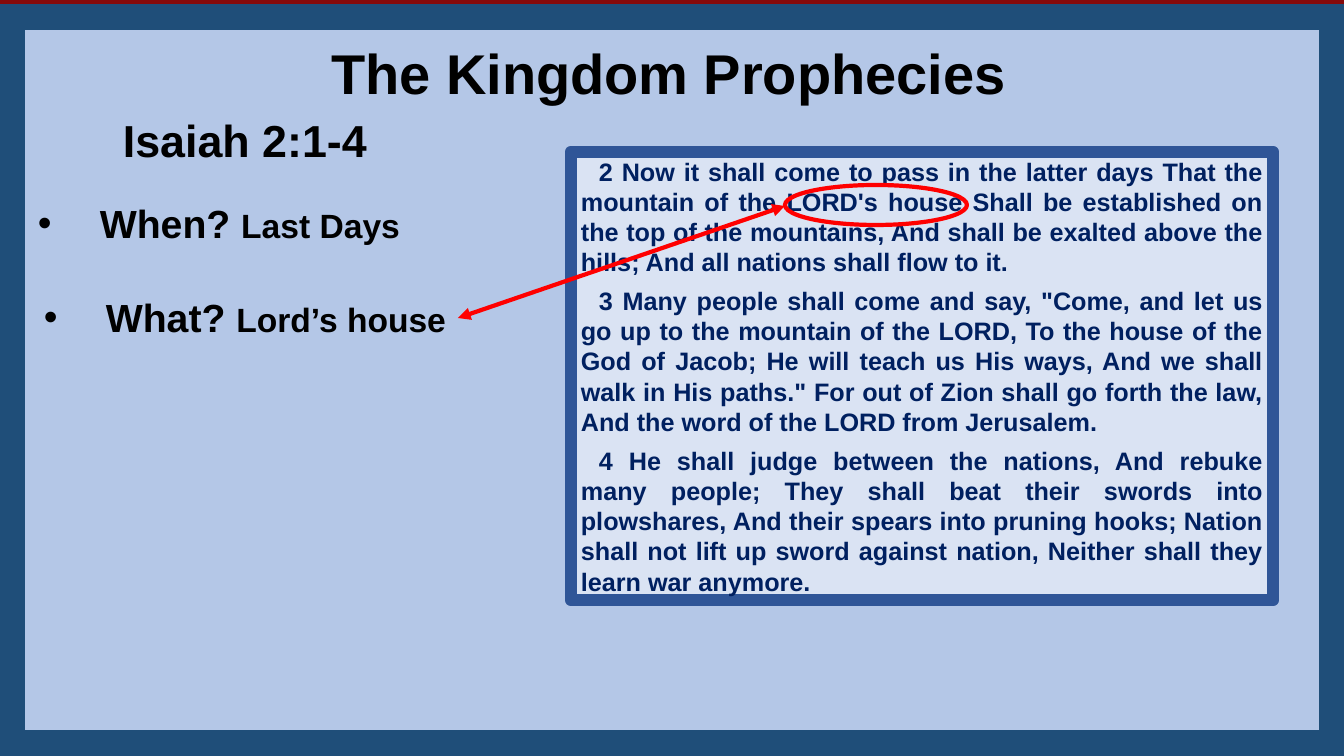
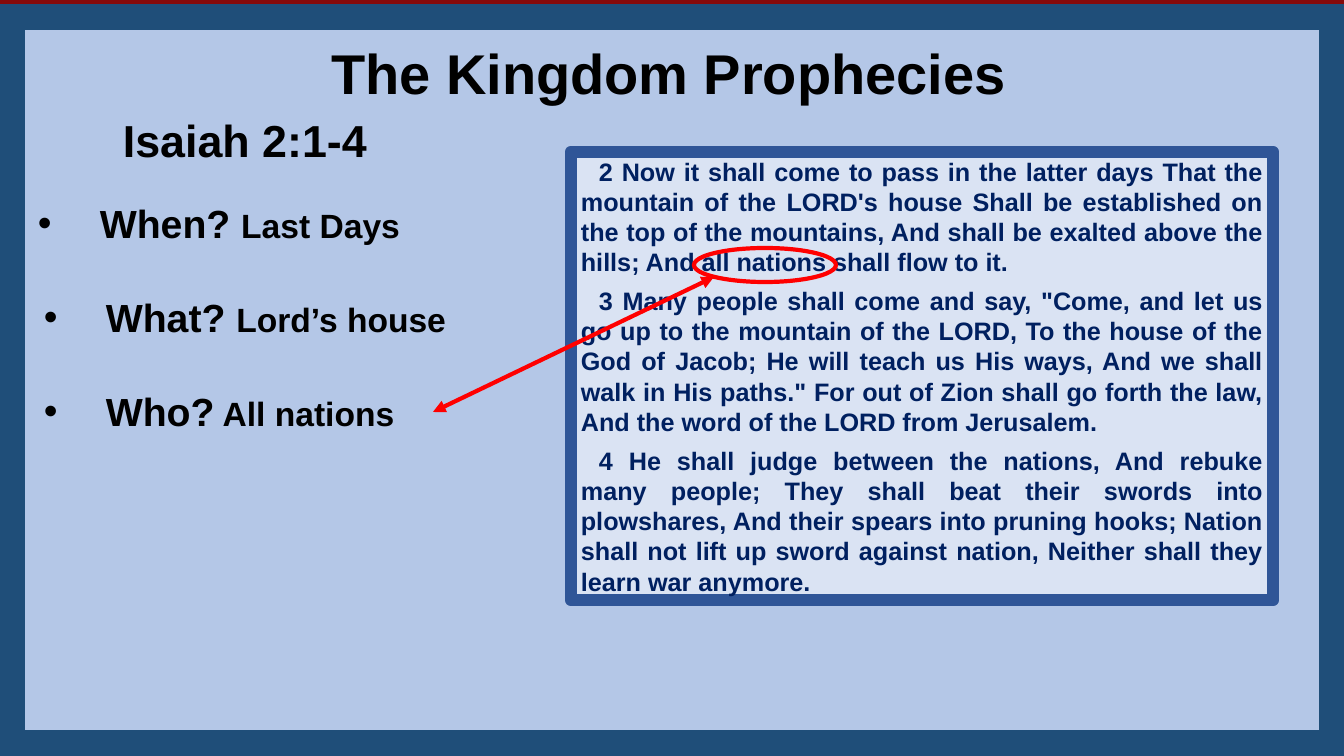
from lxml.etree import SubElement
from pptx import Presentation
from pptx.dml.color import RGBColor
from pptx.enum.shapes import MSO_CONNECTOR as CONNECTOR, MSO_SHAPE as SHAPE
from pptx.enum.text import MSO_ANCHOR as ANCHOR, MSO_AUTO_SIZE as AUTO_SIZE, PP_ALIGN as ALIGN
from pptx.oxml.ns import qn
from pptx.util import Emu, Pt

PX = 914400 / 100.8
FONT = "Arial"
MAROON, NAVY_FRAME, SKY = "860A0A", "1F4E79", "B4C7E7"
PANEL_FILL, PANEL_EDGE = "DAE3F3", "2F5597"
BLACK, VERSE_BLUE, RED = "000000", "002060", "FF0000"

VERSES = [
    "2 Now it shall come to pass in the latter days That the mountain of the LORD's house "
    "Shall be established on the top of the mountains, And shall be exalted above the hills; "
    "And all nations shall flow to it.",
    "3 Many people shall come and say, \"Come, and let us go up to the mountain of the LORD, "
    "To the house of the God of Jacob; He will teach us His ways, And we shall walk in His "
    "paths.\" For out of Zion shall go forth the law, And the word of the LORD from Jerusalem.",
    "4 He shall judge between the nations, And rebuke many people; They shall beat their "
    "swords into plowshares, And their spears into pruning hooks; Nation shall not lift up "
    "sword against nation, Neither shall they learn war anymore.",
]

# Question, answer and left margin of each bullet
QUESTIONS = [
    ("When? ", "Last Days", 64),
    ("What? ", "Lord’s house", 70),
    ("Who?", " All nations", 70),
]

# Number of questions shown, ellipse around the phrase, arrow ends
SLIDES = [
    (2, (785, 185, 182, 40), (458, 318, 785, 206)),
    (3, (694, 248, 142, 34), (433, 412, 714, 277)),
]


def px(length):
    return Emu(round(length * PX))


def color(hex_string):
    return RGBColor.from_string(hex_string)


def set_line(line, hex_string, width):
    line.color.rgb = color(hex_string)
    line.width = Pt(width)


def add_outlined(slide, kind, bounds, fill, edge, width):
    shape = slide.shapes.add_shape(kind, *map(px, bounds))
    shape.shadow.inherit = False
    if fill:
        shape.fill.solid()
        shape.fill.fore_color.rgb = color(fill)
    else:
        shape.fill.background()
    set_line(shape.line, edge, width)
    return shape


def add_span(para, text, size, hex_string):
    span = para.add_run()
    span.text = text
    font_format = {"name": FONT, "size": Pt(size), "bold": True}
    for name, value in font_format.items():
        setattr(span.font, name, value)
    span.font.color.rgb = color(hex_string)


def add_para(frame, spans, hex_string=BLACK, margin=0, indent=0, bullet=False, **para_format):
    """Add a paragraph of (text, size) spans, filling the empty first one if there is one."""
    first = frame.paragraphs[0]
    para = frame.add_paragraph() if first.runs else first
    properties = para._p.get_or_add_pPr()
    properties.set("marL", str(px(margin)))
    properties.set("indent", str(px(indent)))
    if bullet:
        SubElement(properties, qn("a:buFont"), typeface=FONT)
        SubElement(properties, qn("a:buChar"), char="•")
    for name, value in para_format.items():
        setattr(para, name, value)
    for text, size in spans:
        add_span(para, text, size, hex_string)


def add_frame(slide):
    frame = add_outlined(slide, SHAPE.RECTANGLE, (12, 17, 1320, 726), SKY, NAVY_FRAME, 18)
    SubElement(frame.line._get_or_add_ln(), qn("a:miter"), lim="800000")


def add_outline(slide, questions):
    box = slide.shapes.add_textbox(*map(px, (26, 34, 1285, 191 + 94 * len(questions))))
    frame = box.text_frame
    frame.word_wrap = True
    frame.auto_size = AUTO_SIZE.SHAPE_TO_FIT_TEXT
    add_para(frame, [("The Kingdom Prophecies", 40)], alignment=ALIGN.CENTER, space_after=Pt(5))
    add_para(frame, [("Isaiah 2:1-4", 32)], margin=87, space_after=Pt(23))
    for number, (question, answer, margin) in enumerate(questions):
        add_para(frame, [(question, 28), (answer, 24)], margin=margin, indent=-62, bullet=True,
                 space_before=Pt(33.5 if number else 0))


def add_passage(slide):
    panel = add_outlined(slide, SHAPE.RECTANGLE, (571, 152, 702, 448), PANEL_FILL, PANEL_EDGE, 9)
    SubElement(panel.line._get_or_add_ln(), qn("a:round"))
    frame = panel.text_frame
    frame.word_wrap = True
    frame.vertical_anchor = ANCHOR.MIDDLE
    for verse in VERSES:
        add_para(frame, [(verse, 18)], VERSE_BLUE, indent=18,
                 alignment=ALIGN.JUSTIFY, space_after=Pt(6))


def add_double_arrow(slide, ends):
    arrow = slide.shapes.add_connector(CONNECTOR.STRAIGHT, *map(px, ends))
    set_line(arrow.line, RED, 3)
    for end in ("a:headEnd", "a:tailEnd"):
        SubElement(arrow.line._get_or_add_ln(), qn(end), type="triangle")
    SubElement(arrow._element.spPr, qn("a:effectLst"))


def main():
    deck = Presentation()
    deck.slide_width, deck.slide_height = px(1344), px(756)
    background = deck.slide_master.background.fill
    background.solid()
    background.fore_color.rgb = color(MAROON)
    for count, ellipse, arrow_ends in SLIDES:
        slide = deck.slides.add_slide(deck.slide_layouts[6])
        add_frame(slide)
        add_outline(slide, QUESTIONS[:count])
        add_passage(slide)
        add_outlined(slide, SHAPE.OVAL, ellipse, None, RED, 3)
        add_double_arrow(slide, arrow_ends)
    deck.save("out.pptx")


if __name__ == "__main__":
    main()
